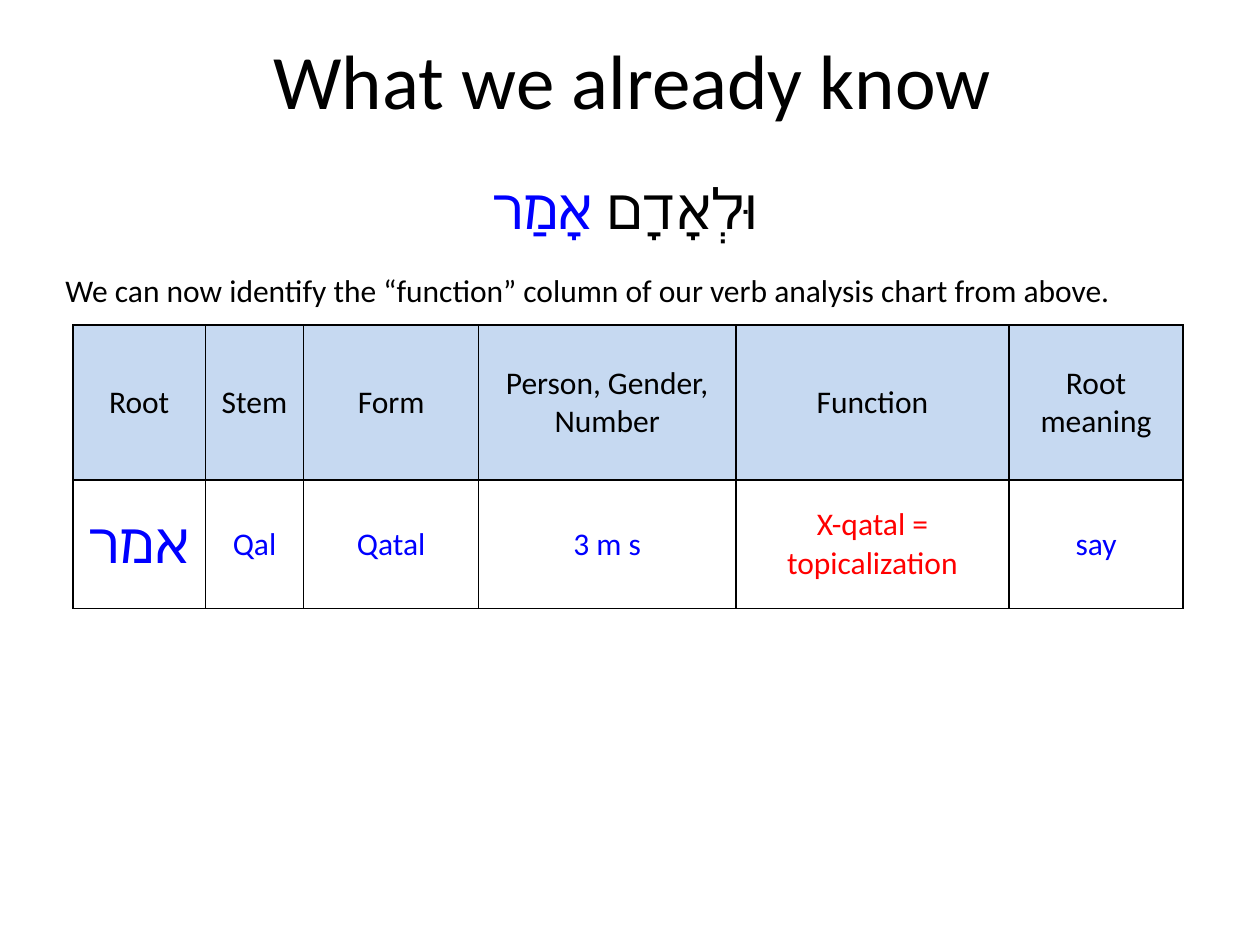
from dataclasses import dataclass
from typing import Any

from lxml.etree import SubElement
from pptx import Presentation
from pptx.dml.color import RGBColor as RGB
from pptx.enum.text import MSO_ANCHOR as ANCHOR, PP_ALIGN as ALIGN
from pptx.oxml.ns import qn
from pptx.util import Inches, Pt

COLORS = {"black": "000000", "blue": "0000FF", "red": "FF0000", "header": "C6D9F1"}
UNIT = 0.1  # inches; the slide is a grid of 100 columns by 75 rows
HEADERS = ["Root", "Stem", "Form", "Person, Gender,\nNumber", "Function", "Root meaning"]
ANALYSIS = ["אמר", "Qal", "Qatal", "3 m s", "X-qatal = topicalization", "say"]
COL_WIDTHS = [10.5, 7.8, 13.9, 20.4, 21.7, 13.8]
ROW_HEIGHTS = [12.3, 10.2]


def grid(n):
    return Inches(n * UNIT)


@dataclass
class VerbSlide:
    slide: Any
    latin: str = "Calibri"
    hebrew: str = "Roboto"
    body: int = 18
    verse: int = 32

    def style(self, r, color="black", size=None, rtl=False):
        f = r.font
        f.name = self.hebrew if rtl else self.latin
        f.size = Pt(size or (self.verse if rtl else self.body))
        f.color.rgb = RGB.from_string(COLORS[color])
        if rtl:
            SubElement(r._r.get_or_add_rPr(), qn("a:cs"), typeface=self.hebrew)

    def align(self, p, align=ALIGN.CENTER, rtl=False):
        p.alignment = align
        if rtl:
            p._p.get_or_add_pPr().set("rtl", "1")

    def text(self, box, parts, align=ALIGN.CENTER, anchor=ANCHOR.TOP, size=None, rtl=False):
        """Add a one-paragraph text box; parts are (text, color) pairs."""
        tf = self.slide.shapes.add_textbox(*map(grid, box)).text_frame
        tf.word_wrap = True
        tf.vertical_anchor = anchor
        p = tf.paragraphs[0]
        self.align(p, align, rtl)
        for text, color in parts:
            r = p.add_run()
            r.text = text
            self.style(r, color, size, rtl)
        return p

    def border(self, cell):
        tc_pr = cell._tc.get_or_add_tcPr()
        for side in ("a:lnL", "a:lnR", "a:lnT", "a:lnB"):
            ln = SubElement(tc_pr, qn(side), w=str(Pt(1)))
            fill = SubElement(ln, qn("a:solidFill"))
            SubElement(fill, qn("a:srgbClr"), val=COLORS["black"])

    def cell(self, cell, text, color, fill=None, rtl=False):
        cell.text_frame.text = text
        cell.vertical_anchor = ANCHOR.MIDDLE
        self.border(cell)
        if fill:
            cell.fill.solid()
            cell.fill.fore_color.rgb = RGB.from_string(COLORS[fill])
        else:
            cell.fill.background()
        for p in cell.text_frame.paragraphs:
            self.align(p, rtl=rtl)
            for r in p.runs:
                self.style(r, color, rtl=rtl)

    def table(self, left, top):
        size = (sum(COL_WIDTHS), sum(ROW_HEIGHTS))
        table = self.slide.shapes.add_table(
            len(ROW_HEIGHTS), len(COL_WIDTHS), *map(grid, (left, top, *size))).table
        table.first_row = table.horz_banding = False
        for row, height in zip(table.rows, ROW_HEIGHTS):
            row.height = grid(height)
        for i, (width, header, value) in enumerate(zip(COL_WIDTHS, HEADERS, ANALYSIS)):
            table.columns[i].width = grid(width)
            self.cell(table.cell(0, i), header, "black", fill="header")
            color = "red" if header == "Function" else "blue"
            self.cell(table.cell(1, i), value, color, rtl=header == "Root")


def main():
    prs = Presentation()
    prs.slide_width, prs.slide_height = grid(100), grid(75)
    s = VerbSlide(prs.slides.add_slide(prs.slide_layouts[6]))
    s.text((5.2, 0, 90, 12.5), [("What we already know", "black")],
           anchor=ANCHOR.MIDDLE, size=44)
    verse = s.text((4.2, 13.3, 90.8, 7.4), [("וּלְאָדָם ", "black"), ("אָמַר", "blue")], rtl=True)
    verse.space_before = Pt(6.4)
    s.table(5.8, 25.8)
    s.text((4.2, 21, 88.8, 4),
           [("We can now identify the “function” column of our verb analysis chart from above.",
             "black")], align=ALIGN.LEFT)
    prs.save("out.pptx")


if __name__ == "__main__":
    main()
